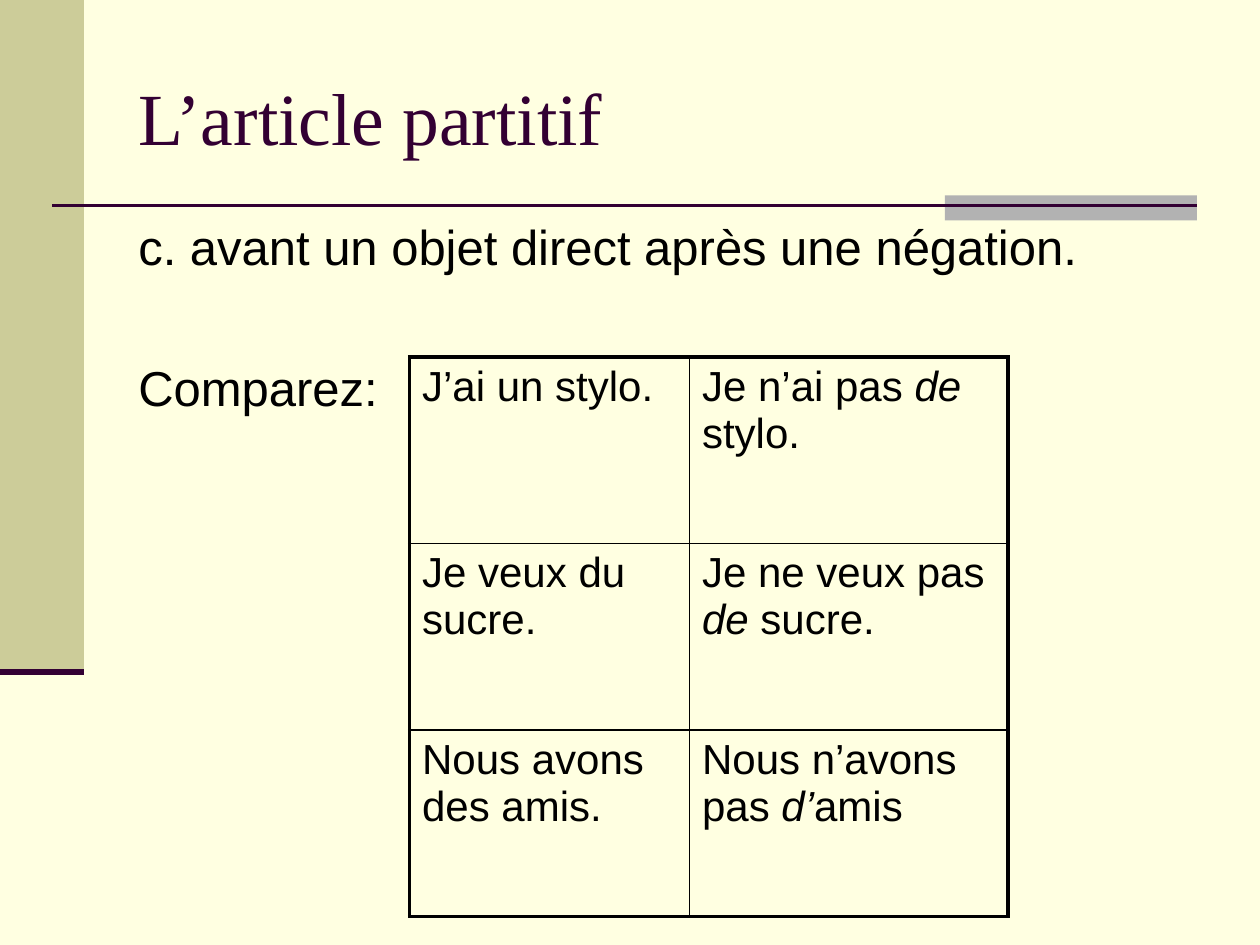
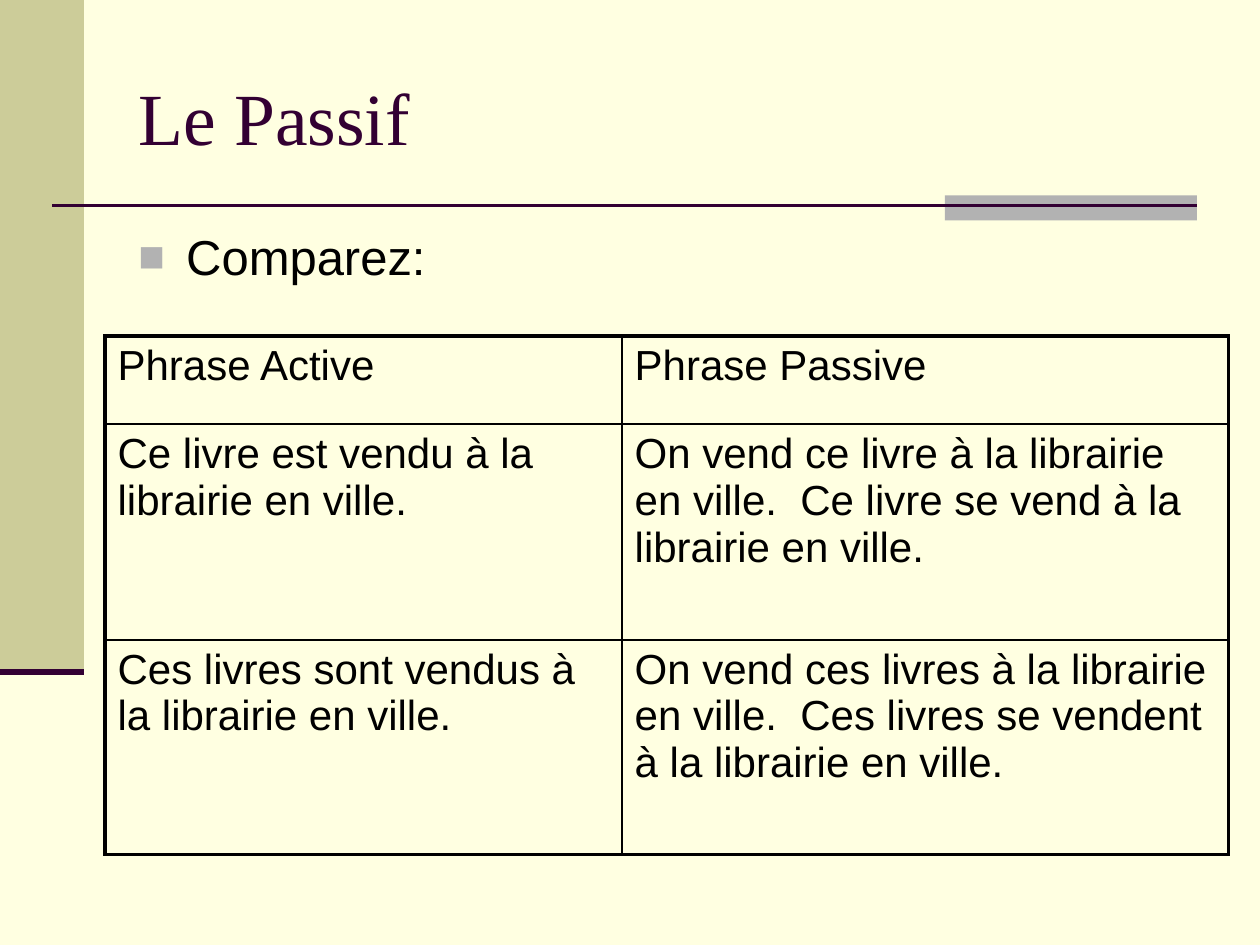
"""Build two French grammar slides, each with a title, a lead-in and a comparison table."""
from lxml import etree
from pptx import Presentation
from pptx import util as u
from pptx.dml import color
from pptx.enum import shapes, text
from pptx.oxml import ns

Pt = u.Pt
CREAM, OLIVE, GREY, PLUM, BLACK = "FFFFE1", "CCCC99", "B2B2B2", "330033", "000000"
TITLE_FONT, BODY_FONT = "Times New Roman", "Arial"
WIDTH, HEIGHT = 720, 540
MARGIN, CONTENT_WIDTH = 72, 612
OUTER_BORDER, INNER_BORDER = 2.25, 1


def rgb(value):
    """Turn a hex string into a colour."""
    return color.RGBColor.from_string(value)


def add_xml(parent, tag, **attrs):
    """Append a DrawingML element and return it."""
    return etree.SubElement(parent, ns.qn("a:" + tag), attrs)


def add_rect(s, box, fill):
    """Draw a plain filled rectangle."""
    sp = s.shapes.add_shape(shapes.MSO_SHAPE.RECTANGLE, *map(Pt, box))
    sp.shadow.inherit = False
    sp.fill.solid()
    sp.fill.fore_color.rgb = rgb(fill)
    sp.line.fill.background()


def add_rule(s, x1, x2, y, weight):
    """Draw a horizontal plum line."""
    line = s.shapes.add_connector(shapes.MSO_CONNECTOR.STRAIGHT, Pt(x1), Pt(y), Pt(x2), Pt(y))
    line.line.color.rgb = rgb(PLUM)
    line.line.width = Pt(weight)
    add_xml(line._element.spPr, "effectLst")


def add_textbox(s, box, anchor):
    """Add a wrapping text box and return its frame."""
    tf = s.shapes.add_textbox(*map(Pt, box)).text_frame
    tf.word_wrap = True
    tf.vertical_anchor = anchor
    return tf


def set_font(p, name, size, hex_color):
    """Set the font shared by all runs of a paragraph."""
    p.font.name, p.font.size = name, Pt(size)
    p.font.color.rgb = rgb(hex_color)


def space_by_line(p):
    """Put a fifth of a line above a paragraph."""
    add_xml(add_xml(p._p.get_or_add_pPr(), "spcBef"), "spcPct", val="20000")


def add_bullet(p, indent):
    """Give a paragraph a hanging grey square bullet."""
    pPr = p._p.get_or_add_pPr()
    pPr.set("marL", str(Pt(indent)))
    pPr.set("indent", str(-Pt(indent)))
    add_xml(add_xml(pPr, "buClr"), "srgbClr", val=GREY)
    add_xml(pPr, "buSzPct", val="90000")
    add_xml(pPr, "buFont", typeface=BODY_FONT)
    add_xml(pPr, "buChar", char="■")


def add_frame(s, title):
    """Draw the background, side band, rules and title."""
    s.background.fill.solid()
    s.background.fill.fore_color.rgb = rgb(CREAM)
    band_width, band_height = 48, 384
    add_rect(s, (0, 0, band_width, band_height), OLIVE)
    add_rect(s, (540, 111.6, 144, 14.4), GREY)
    add_rule(s, 30, MARGIN + CONTENT_WIDTH, 117.5, 1.5)
    add_rule(s, 0, band_width, band_height, 3.5)
    tf = add_textbox(s, (MARGIN, 21.6, CONTENT_WIDTH, 90), text.MSO_ANCHOR.MIDDLE)
    p = tf.paragraphs[0]
    p.text = title
    set_font(p, TITLE_FONT, 42, PLUM)


def add_body(s, top, lines, bulleted=False):
    """Write the lead-in lines, spaced one blank line apart."""
    tf = add_textbox(s, (MARGIN, top, CONTENT_WIDTH, 356.4), text.MSO_ANCHOR.TOP)
    for i, line in enumerate(lines):
        p = tf.add_paragraph() if i else tf.paragraphs[0]
        p.text = line
        if i:
            p.space_before = Pt(47)
        else:
            space_by_line(p)
        if bulleted:
            add_bullet(p, 27.36)
        set_font(p, BODY_FONT, 28, BLACK)


def set_borders(cell, row, col, last_row, last_col):
    """Draw heavy lines on the table's edge and thin ones inside."""
    on_edge = {"lnL": col == 0, "lnR": col == last_col, "lnT": row == 0, "lnB": row == last_row}
    tcPr = cell._tc.get_or_add_tcPr()
    for side, outer in on_edge.items():
        ln = add_xml(tcPr, side, w=str(Pt(OUTER_BORDER if outer else INNER_BORDER)))
        add_xml(add_xml(ln, "solidFill"), "srgbClr", val=BLACK)


def fill_cell(cell, content):
    """Write cell text, with the parts between asterisks in italics."""
    p = cell.text_frame.paragraphs[0]
    space_by_line(p)
    set_font(p, BODY_FONT, 24, BLACK)
    for i, part in enumerate(content.split("*")):
        r = p.add_run()
        r.text = part
        if i % 2:
            r.font.italic = True


def add_comparison(s, left, top, widths, heights, rows):
    """Add a bordered table of phrases."""
    box = map(Pt, (left, top, sum(widths), sum(heights)))
    table = s.shapes.add_table(len(heights), len(widths), *box).table
    table.first_row = table.horz_banding = False
    for column, width in zip(table.columns, widths):
        column.width = Pt(width)
    for i, (height, phrases) in enumerate(zip(heights, rows)):
        table.rows[i].height = Pt(height)
        for j, phrase in enumerate(phrases):
            cell = table.cell(i, j)
            set_borders(cell, i, j, len(heights) - 1, len(widths) - 1)
            cell.fill.background()
            fill_cell(cell, phrase)


def build_partitif(s):
    """Build the slide on the partitive article."""
    add_frame(s, "L’article partitif")
    add_body(s, 120, ["c. avant un objet direct après une négation.", "Comparez:"])
    add_comparison(s, 234, 204, [160, 182], [106.6] * 3, [
        ("J’ai un stylo.", "Je n’ai pas *de *stylo."),
        ("Je veux du sucre.", "Je ne veux pas *de *sucre."),
        ("Nous avons des amis.", "Nous n’avons pas *d’*amis"),
    ])


def build_passif(s):
    """Build the slide on the passive voice."""
    add_frame(s, "Le Passif")
    add_body(s, 126, ["Comparez:"], bulleted=True)
    add_comparison(s, 60, 192, [295.5, 346.5], [50.4, 123.2, 122.6], [
        ("Phrase Active", "Phrase Passive"),
        ("Ce livre est vendu à la librairie en ville.",
         "On vend ce livre à la librairie en ville.  Ce livre se vend à la librairie en ville."),
        ("Ces livres sont vendus à la librairie en ville.",
         "On vend ces livres à la librairie en ville.  "
         "Ces livres se vendent à la librairie en ville."),
    ])


def main():
    """Build and save the deck."""
    prs = Presentation()
    prs.slide_width, prs.slide_height = Pt(WIDTH), Pt(HEIGHT)
    for build in (build_partitif, build_passif):
        build(prs.slides.add_slide(prs.slide_layouts[6]))
    prs.save("out.pptx")


if __name__ == "__main__":
    main()
